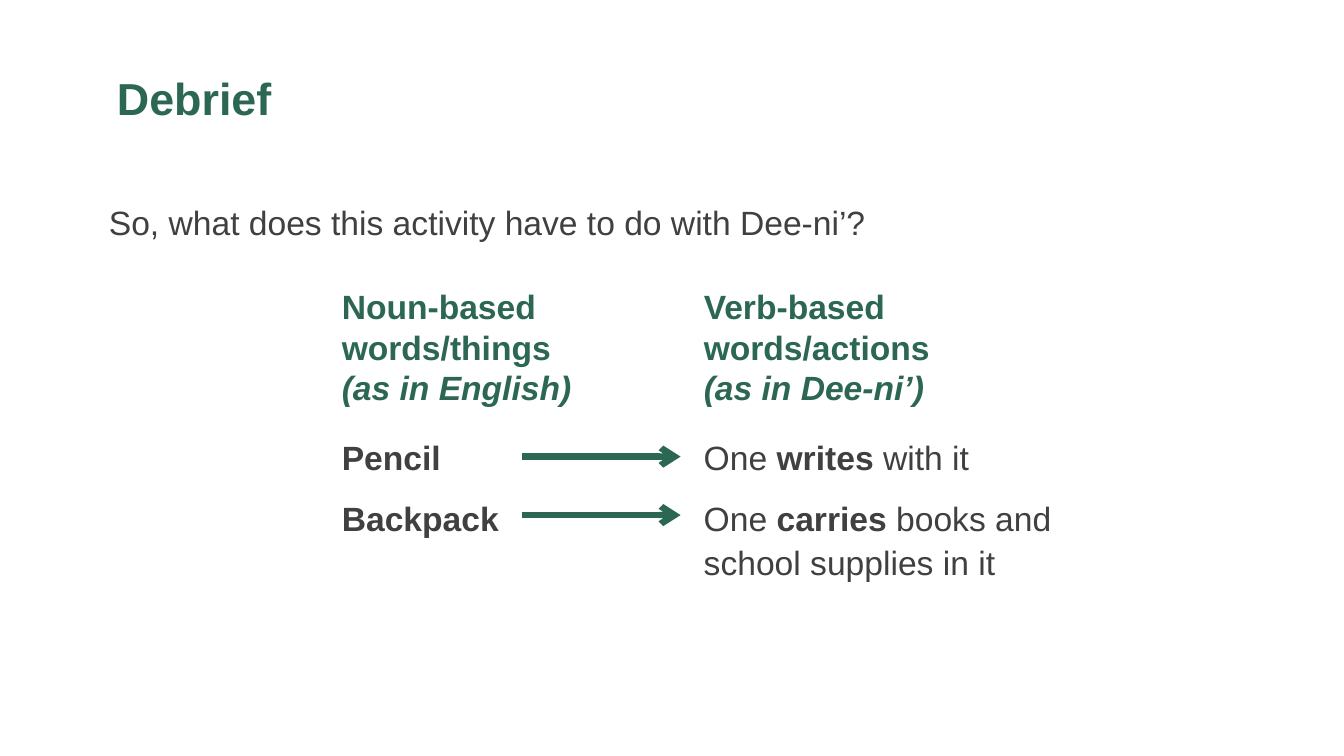
from lxml import etree
from pptx import Presentation
from pptx.dml.color import RGBColor
from pptx.enum.shapes import MSO_CONNECTOR
from pptx.enum.text import MSO_ANCHOR
from pptx.oxml.ns import qn
from pptx.util import Inches, Pt

STRAIGHT = MSO_CONNECTOR.STRAIGHT
TOP, MIDDLE = MSO_ANCHOR.TOP, MSO_ANCHOR.MIDDLE
GREEN, GRAY = "2C6754", "404040"
NOUN_X, VERB_X = 3.39, 6.98
HEAD_Y, WORD_Y = 2.84, 4.29


def color(code):
    return RGBColor.from_string(code)


def add_text(box, lines, tint, size=24, bold=None, space=0, pitch=1.0, anchor=TOP):
    frame = slide.shapes.add_textbox(*map(Inches, box)).text_frame
    frame.word_wrap = True
    frame.vertical_anchor = anchor
    frame.margin_left = frame.margin_right = 0
    frame.margin_top = frame.margin_bottom = 0
    for i, line in enumerate(lines):
        para = frame.add_paragraph() if i else frame.paragraphs[0]
        para.line_spacing = pitch
        para.space_after = Pt(space)
        font = para.font
        font.name, font.size, font.bold = "Arial", Pt(size), bold
        font.color.rgb = color(tint)
        for j, part in enumerate(line.split("*")):
            run = para.add_run()
            run.text = part
            if j % 2:
                run.font.bold = True
    return frame


deck = Presentation()
deck.slide_width, deck.slide_height = Inches(13.33), Inches(7.5)
slide = deck.slides.add_slide(deck.slide_layouts[6])

add_text((1.16, 0.54, 11.29, 0.92), ["Debrief"], GREEN, size=32, bold=True,
         pitch=0.9, anchor=MIDDLE)
add_text((1.08, 2, 10.48, 0.45),
         ["So, what does this activity have to do with Dee-ni’?"], GRAY, space=18)

heads = [
    (NOUN_X, 2.37, "Noun-based words/things", "(as in English)"),
    (VERB_X, 3.18, "Verb-based words/actions", "(as in Dee-ni’)"),
]
for x, width, kind, tongue in heads:
    frame = add_text((x, HEAD_Y, width, 1.15), [kind, tongue], GREEN, bold=True)
    frame.paragraphs[1].font.italic = True

add_text((NOUN_X, WORD_Y, 1.72, 1.15), ["Pencil", "Backpack"], GRAY,
         bold=True, space=12, pitch=1.1)
add_text((VERB_X, WORD_Y, 4.27, 1.15),
         ["One *writes* with it", "One *carries* books and school supplies in it"],
         GRAY, space=12, pitch=1.1)

for y in (4.53, 5.11):
    arrow = slide.shapes.add_connector(
        STRAIGHT, Inches(5.18), Inches(y), Inches(6.75), Inches(y))
    arrow.line.color.rgb = color(GREEN)
    arrow.line.width = Pt(4.5)
    etree.SubElement(arrow.line._get_or_add_ln(), qn("a:tailEnd"), type="arrow")
    etree.SubElement(arrow._element.spPr, qn("a:effectLst"))

deck.save("out.pptx")
